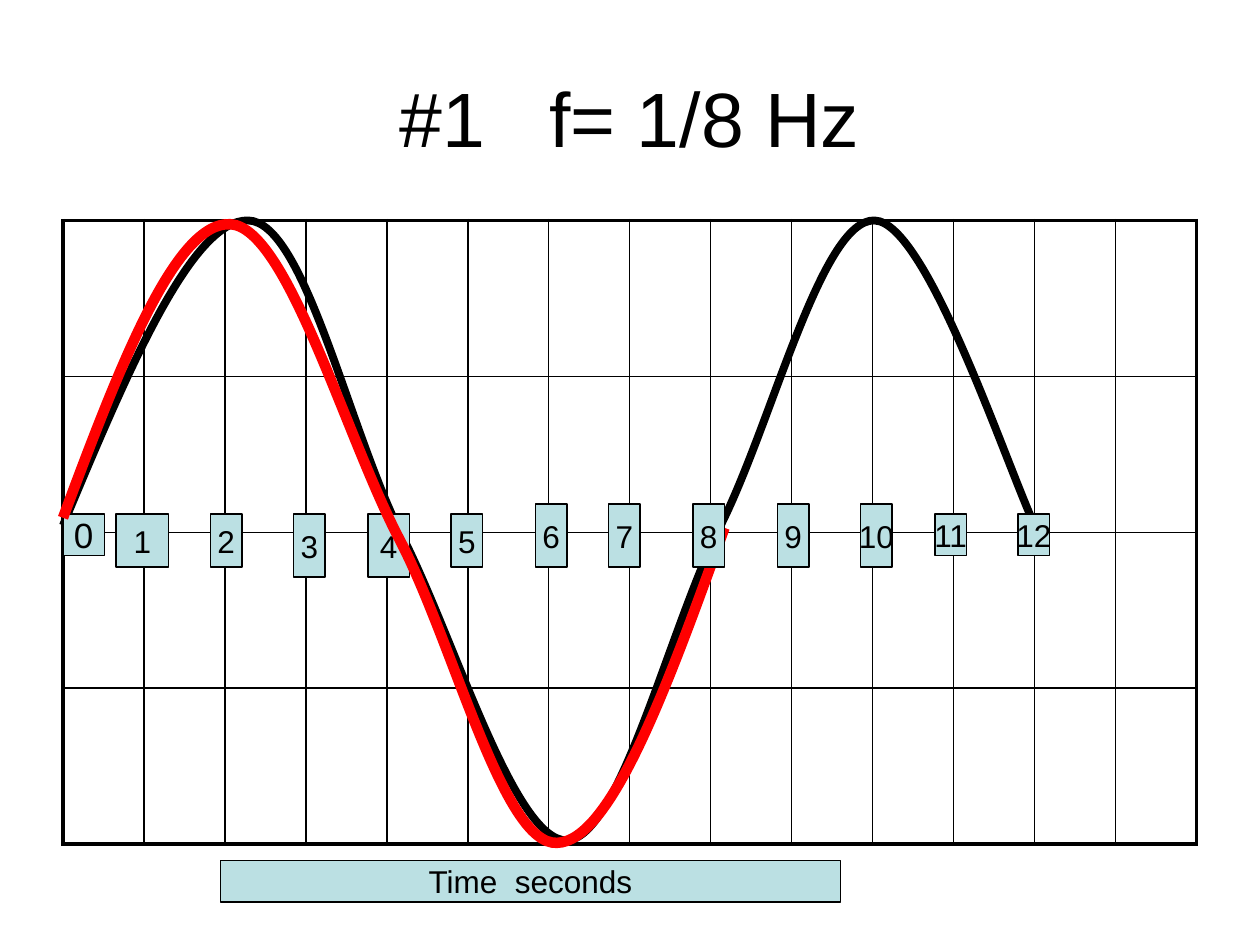
from dataclasses import dataclass

import pptx
import pptx.dml.color
import pptx.enum.shapes
import pptx.enum.text
import pptx.oxml
import pptx.oxml.ns
import pptx.slide
import pptx.text.text
import pptx.util
from pptx.util import Inches

Point = tuple[float, float]


@dataclass(frozen=True)
class Theme:
    font: str = "Arial"
    ink: str = "000000"
    label_fill: str = "BBE0E3"
    highlight: str = "FF0000"
    title_size: float = 44
    zero_size: float = 20
    label_size: float = 18
    outer_border: float = 2.25
    inner_border: float = 1
    label_border: float = 0.75


@dataclass(frozen=True)
class Label:
    text: str
    left: float
    top: float
    width: float
    height: float
    size: float


@dataclass(frozen=True)
class Wave:
    """A start point followed by Bezier points in groups of three."""
    points: list[Point]
    color: str
    weight: float


THEME = Theme()
GRID_LEFT, GRID_TOP, GRID_WIDTH, GRID_HEIGHT = 0.5, 1.75, 9, 4.95
ROWS, COLUMNS = 4, 14

# Left, top, width and height of the labels for seconds 0 to 12
SECOND_BOXES = [
    (0.5, 4.08, 0.33, 0.33), (0.92, 4.08, 0.42, 0.42), (1.67, 4.08, 0.25, 0.42),
    (2.33, 4.08, 0.25, 0.5), (2.92, 4.08, 0.33, 0.5), (3.58, 4.08, 0.25, 0.42),
    (4.25, 4, 0.25, 0.5), (4.83, 4, 0.25, 0.5), (5.5, 4, 0.25, 0.5),
    (6.17, 4, 0.25, 0.5), (6.83, 4, 0.25, 0.5), (7.42, 4.08, 0.25, 0.33),
    (8.08, 4.08, 0.25, 0.33),
]
SECONDS = [
    Label(str(second), *box, THEME.label_size if second else THEME.zero_size)
    for second, box in enumerate(SECOND_BOXES)
]
AXIS_TITLE = Label("Time  seconds", 1.75, 6.83, 4.92, 0.33, THEME.label_size)
FRONT_SECOND = 8

FULL_WAVE = Wave([
    (0.5, 4.17),
    (1.01, 2.95), (1.52, 1.74), (1.97, 1.75),
    (2.42, 1.76), (2.77, 3.43), (3.19, 4.25),
    (3.61, 5.07), (4.08, 6.68), (4.5, 6.67),
    (4.92, 6.65), (5.31, 4.99), (5.72, 4.17),
    (6.13, 3.35), (6.52, 1.74), (6.94, 1.75),
    (7.37, 1.76), (8.03, 3.83), (8.25, 4.25),
], THEME.ink, 4.5)
ONE_PERIOD = Wave([
    (0.5, 4.11),
    (0.94, 2.93), (1.39, 1.75), (1.83, 1.78),
    (2.28, 1.81), (2.74, 3.46), (3.17, 4.28),
    (3.6, 5.1), (3.99, 6.71), (4.42, 6.69),
    (4.85, 6.68), (5.3, 5.44), (5.75, 4.19),
], THEME.highlight, 6)


def rgb(color: str) -> pptx.dml.color.RGBColor:
    return pptx.dml.color.RGBColor.from_string(color)


def write_centred(frame: pptx.text.text.TextFrame, text: str, size: float) -> None:
    frame.text = text
    frame.vertical_anchor = pptx.enum.text.MSO_ANCHOR.MIDDLE
    paragraph = frame.paragraphs[0]
    paragraph.alignment = pptx.enum.text.PP_ALIGN.CENTER
    font = paragraph.runs[0].font
    font.name = THEME.font
    font.size = pptx.util.Pt(size)
    font.color.rgb = rgb(THEME.ink)


def add_title(slide: pptx.slide.Slide, text: str) -> None:
    title = slide.shapes.title
    title.left, title.top = Inches(0.5), Inches(0.3)
    title.width, title.height = Inches(9), Inches(1.25)
    write_centred(title.text_frame, text, THEME.title_size)


def add_grid(slide: pptx.slide.Slide) -> None:
    table = slide.shapes.add_table(
        ROWS, COLUMNS, Inches(GRID_LEFT), Inches(GRID_TOP),
        Inches(GRID_WIDTH), Inches(GRID_HEIGHT)).table
    table.first_row = table.horz_banding = False
    for column in table.columns:
        column.width = Inches(GRID_WIDTH / COLUMNS)
    for row in table.rows:
        row.height = Inches(GRID_HEIGHT / ROWS)
    for r in range(ROWS):
        for c in range(COLUMNS):
            cell = table.cell(r, c)
            outer_edges = {"lnL": c == 0, "lnR": c == COLUMNS - 1,
                           "lnT": r == 0, "lnB": r == ROWS - 1}
            properties = cell._tc.get_or_add_tcPr()
            for edge, is_outer in outer_edges.items():
                weight = THEME.outer_border if is_outer else THEME.inner_border
                properties.append(pptx.oxml.parse_xml(
                    f'<a:{edge} {pptx.oxml.ns.nsdecls("a")} w="{pptx.util.Pt(weight)}">'
                    f'<a:solidFill><a:srgbClr val="{THEME.ink}"/></a:solidFill></a:{edge}>'))
            cell.fill.background()


def add_wave(slide: pptx.slide.Slide, wave: Wave) -> None:
    """Draw the wave, turning each three straight segments into one Bezier curve."""
    start, *rest = [(Inches(x), Inches(y)) for x, y in wave.points]
    builder = slide.shapes.build_freeform(*start)
    builder.add_line_segments(rest, close=False)
    curve = builder.convert_to_shape()
    curve.shadow.inherit = False
    curve.fill.background()
    curve.line.color.rgb = rgb(wave.color)
    curve.line.width = pptx.util.Pt(wave.weight)
    segments = curve._element.xpath(".//a:lnTo")
    for i in range(0, len(segments), 3):
        bezier = pptx.oxml.parse_xml(f'<a:cubicBezTo {pptx.oxml.ns.nsdecls("a")}/>')
        segments[i].addprevious(bezier)
        for segment in segments[i:i + 3]:
            bezier.append(segment[0])
            segment.getparent().remove(segment)


def add_label(slide: pptx.slide.Slide, label: Label) -> None:
    box = slide.shapes.add_shape(
        pptx.enum.shapes.MSO_SHAPE.RECTANGLE, Inches(label.left), Inches(label.top),
        Inches(label.width), Inches(label.height))
    box.shadow.inherit = False
    box.fill.solid()
    box.fill.fore_color.rgb = rgb(THEME.label_fill)
    box.line.color.rgb = rgb(THEME.ink)
    box.line.width = pptx.util.Pt(THEME.label_border)
    write_centred(box.text_frame, label.text, label.size)
    box.text_frame.word_wrap = False


def main() -> None:
    presentation = pptx.Presentation()
    presentation.slide_width, presentation.slide_height = Inches(10), Inches(7.5)
    slide = presentation.slides.add_slide(presentation.slide_layouts.get_by_name("Title Only"))
    add_title(slide, "#1   f= 1/8 Hz")
    add_grid(slide)
    add_wave(slide, FULL_WAVE)
    for second, label in enumerate(SECONDS):
        if second != FRONT_SECOND:
            add_label(slide, label)
    add_label(slide, AXIS_TITLE)
    add_wave(slide, ONE_PERIOD)
    add_label(slide, SECONDS[FRONT_SECOND])
    presentation.save("out.pptx")


if __name__ == "__main__":
    main()
